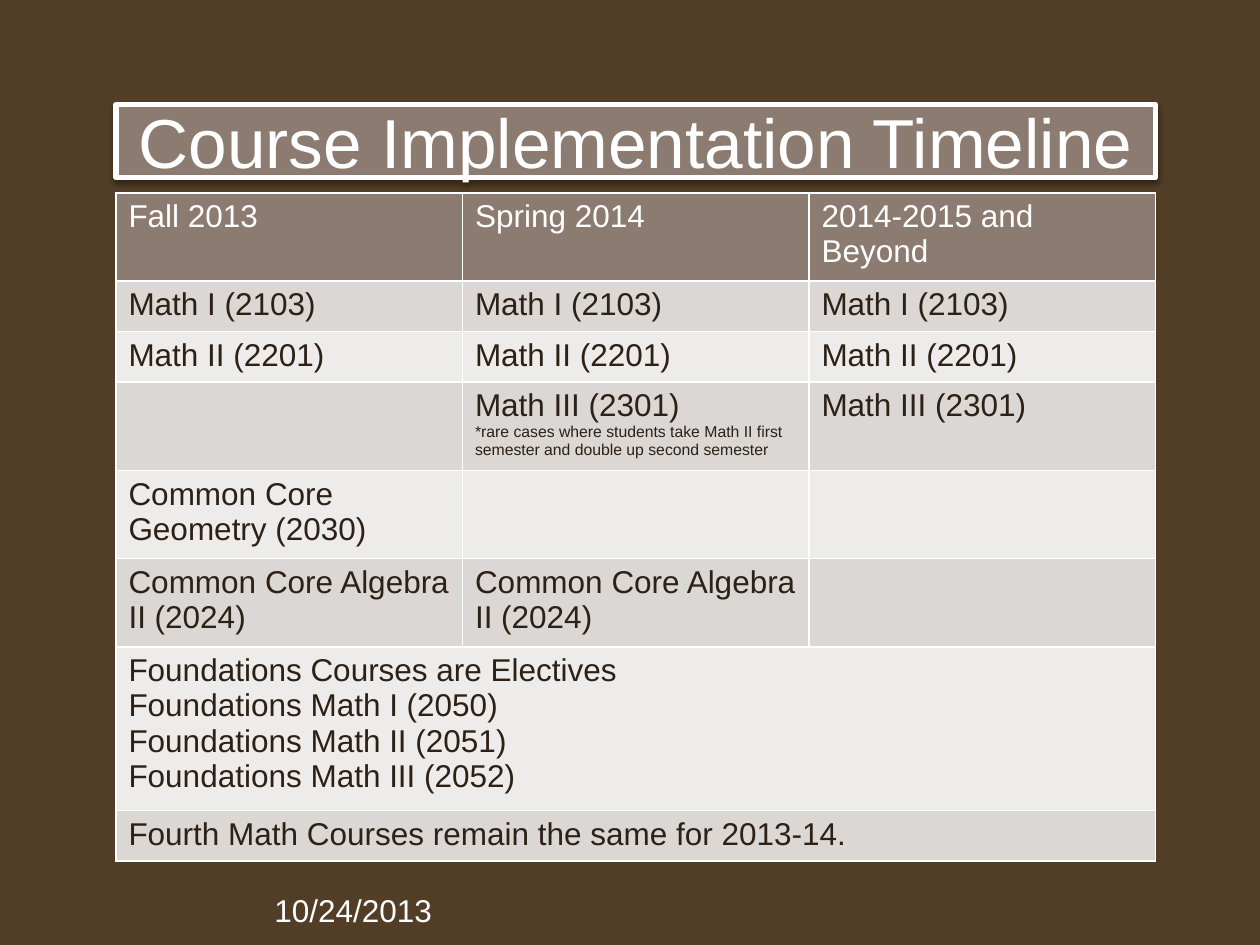
from lxml import etree
from pptx import Presentation
from pptx.dml.color import RGBColor
from pptx.enum.shapes import MSO_SHAPE as Shape
from pptx.enum.text import MSO_ANCHOR as Anchor, PP_ALIGN as Align
from pptx.oxml import parse_xml
from pptx.oxml.ns import nsdecls, qn
from pptx.util import Inches, Pt

BACKGROUND, WHITE, INK = "523E26", "FFFFFF", "2D2015"
TAUPE, BAND_DARK, BAND_LIGHT = "8C7B70", "DAD7D5", "EEECEB"

MATH_1, MATH_2, MATH_3 = "Math I (2103)", "Math II (2201)", "Math III (2301)"
ALGEBRA = "Common Core Algebra II (2024)"
RARE_CASES = ("*rare cases where students take Math II first semester "
              "and double up second semester")
FOUNDATIONS = "\n".join([
    "Foundations Courses are Electives",
    "Foundations Math I (2050)",
    "Foundations Math II (2051)",
    "Foundations Math III (2052)",
])

# Lines of text each row must hold, then its entries.
# A row with a single entry spans all the terms; \v is a line break.
TIMELINE = [
    (2, ["Fall 2013", "Spring 2014", "2014-2015 and Beyond"]),
    (1, [MATH_1] * 3),
    (1, [MATH_2] * 3),
    (2, ["", f"{MATH_3}\v{RARE_CASES}", MATH_3]),
    (2, ["Common Core Geometry (2030)", "", ""]),
    (2, [ALGEBRA, ALGEBRA, ""]),
    (4, [FOUNDATIONS]),
    (1, ["Fourth Math Courses remain the same for 2013-14."]),
]
TERMS = 3


def color(hex_code):
    return RGBColor.from_string(hex_code)


def paint(part, hex_code):
    part.fill.solid()
    part.fill.fore_color.rgb = color(hex_code)


def write(frame, text, size, hex_code):
    frame.text = text
    for paragraph in frame.paragraphs:
        for run in paragraph.runs:
            run.font.name = "Arial"
            run.font.size = Pt(size)
            run.font.bold = False
            run.font.color.rgb = color(hex_code)


def add_title(slide, left, top, width, height):
    banner = slide.shapes.add_shape(Shape.RECTANGLE, left, top, width, height)
    paint(banner, TAUPE)
    banner.line.color.rgb = color(WHITE)
    banner.line.width = Pt(3)
    etree.SubElement(banner.line._get_or_add_ln(), qn("a:round"))

    # Soft shadow straight below
    banner.shadow.inherit = False
    effects = banner._element.spPr.find(qn("a:effectLst"))
    effects.append(parse_xml(
        f'<a:outerShdw {nsdecls("a")} blurRad="{Pt(3.1)}" dist="{Pt(1.6)}" '
        'dir="5400000" rotWithShape="0"><a:srgbClr val="000000">'
        '<a:alpha val="38000"/></a:srgbClr></a:outerShdw>'))

    frame = banner.text_frame
    frame.word_wrap = True
    frame.vertical_anchor = Anchor.MIDDLE
    write(frame, "Course Implementation Timeline", 39.6, WHITE)
    frame.paragraphs[0].alignment = Align.CENTER


def add_timeline(slide, left, top, width, min_row, line_height, padding):
    heights = [max(min_row, lines * line_height + padding)
               for lines, _ in TIMELINE]
    table = slide.shapes.add_table(len(TIMELINE), TERMS, left, top, width,
                                   sum(heights)).table
    for row, (_, entries) in enumerate(TIMELINE):
        table.rows[row].height = heights[row]
        if row == 0:
            fill, ink = TAUPE, WHITE
        else:
            fill, ink = (BAND_DARK if row % 2 else BAND_LIGHT), INK
        for column in range(TERMS):
            paint(table.cell(row, column), fill)
        if len(entries) == 1:
            table.cell(row, 0).merge(table.cell(row, TERMS - 1))
        for column, entry in enumerate(entries):
            frame = table.cell(row, column).text_frame
            write(frame, entry, 18, ink)
            # Footnote under the course name
            for run in frame.paragraphs[0].runs:
                if run.text == RARE_CASES:
                    run.font.size = Pt(9)


def add_date(slide, left, top, width, height):
    frame = slide.shapes.add_textbox(left, top, width, height).text_frame
    frame.word_wrap = True
    write(frame, "10/24/2013", 18, WHITE)


def main():
    prs = Presentation()
    prs.slide_width, prs.slide_height = Inches(10), Inches(7.5)
    slide = prs.slides.add_slide(prs.slide_layouts[6])
    paint(slide.background, BACKGROUND)

    left, width = Inches(0.92), Inches(8.25)
    add_title(slide, left, Inches(0.83), width, Inches(0.58))
    add_date(slide, Inches(2.08), Inches(7.02), Inches(1.74), Inches(0.48))
    add_timeline(slide, left, Inches(1.53), width, min_row=Inches(0.4),
                 line_height=Inches(0.28), padding=Inches(0.1))
    prs.save("out.pptx")


if __name__ == "__main__":
    main()
